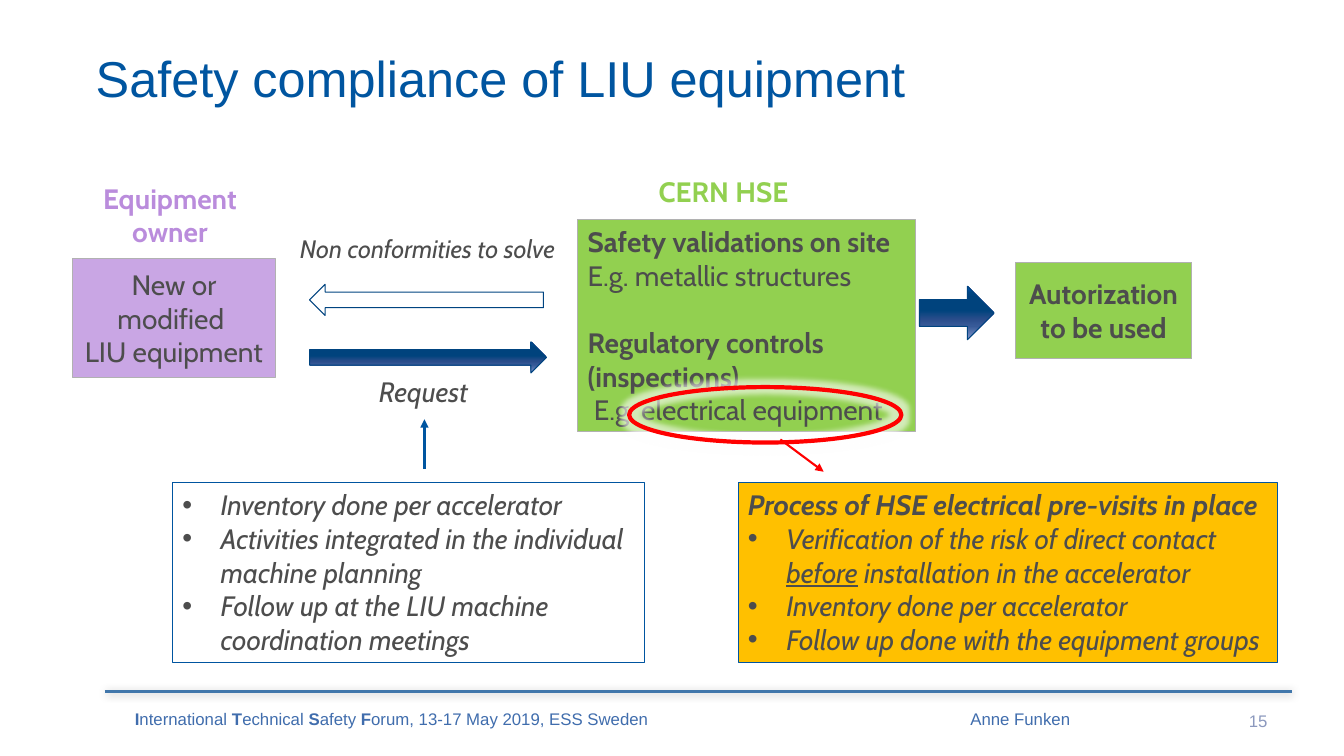
from dataclasses import dataclass

from lxml import etree
from pptx import Presentation, util as u
from pptx.dml.color import RGBColor
from pptx.enum import shapes, text
from pptx.oxml import ns

CELL = 0.1  # inches per grid cell
COLORS = {
    "title": "0055A0", "body": "4D4D4D", "footer": "406DAD", "number": "8C99BE",
    "rule": "4177AB", "green": "92D050", "purple": "C9A6E4", "owner": "BA8CDC",
    "amber": "FFC000", "red": "FF0000", "border": "B1B1B1", "arrow": "004480",
    "white": "FFFFFF", "black": "000000",
}
ARROW_STOPS = [(0, "8498CC"), (25, "375A98"), (38, "2A4D8B"), (55, "00437D"),
               (80, "00427C"), (88, "004683"), (100, "0055B9")]
ALIGN = {"l": text.PP_ALIGN.LEFT, "c": text.PP_ALIGN.CENTER, "r": text.PP_ALIGN.RIGHT}
SHAPE = shapes.MSO_SHAPE


@dataclass
class Para:
    """Text between bars gets the accent: bold or underline."""
    words: str
    bold: bool = False
    bullet: bool = False
    before: int = 0
    accent: str = "bold"


def rgb(name):
    return RGBColor.from_string(COLORS[name])


def cells(*values):
    return [u.Inches(value * CELL) for value in values]


def place(region, left, top, width, height):
    return cells(region[0] + left, region[1] + top, width, height)


def add_xml(parent, tag, **attributes):
    return etree.SubElement(parent, ns.qn(tag), {k: str(v) for k, v in attributes.items()})


def add_effect(item, tag, color, alpha, **attributes):
    props = item._element.spPr
    for old in props.findall(ns.qn("a:effectLst")):
        props.remove(old)
    effect = add_xml(add_xml(props, "a:effectLst"), tag, **attributes)
    tint = add_xml(effect, "a:srgbClr", val=COLORS[color])
    add_xml(tint, "a:alpha", val=alpha * 1000)


def write(shape, paras, size=20, color="body", font="Cabin", align="l",
          anchor=text.MSO_ANCHOR.TOP, italic=False, inset=0.1):
    frame = shape.text_frame
    frame.word_wrap = True
    frame.vertical_anchor = anchor
    frame.margin_left = frame.margin_right = u.Inches(inset)
    for index, item in enumerate(paras):
        para = frame.add_paragraph() if index else frame.paragraphs[0]
        para.alignment = ALIGN[align]
        if item.before:
            para.space_before = u.Pt(item.before)
        if item.bullet:
            props = para._p.get_or_add_pPr()
            props.set("marL", str(u.Inches(0.38)))
            props.set("indent", str(-u.Inches(0.38)))
            add_xml(props, "a:buFont", typeface="Arial")
            add_xml(props, "a:buChar", char="•")
        para.font.name, para.font.size = font, u.Pt(size)
        para.font.bold, para.font.italic = item.bold, italic
        para.font.color.rgb = rgb(color)
        for number, part in enumerate(item.words.split("|")):
            if part:
                span = para.add_run()
                span.text = part
                if number % 2:
                    setattr(span.font, item.accent, True)


def add_label(page, region, spot, words, bold=False, **style):
    box = page.shapes.add_textbox(*place(region, *spot))
    write(box, [Para(words, bold)], **style)


def add_shape(page, region, kind, spot, line, fill=None, weight=0.75):
    shape = page.shapes.add_shape(kind, *place(region, *spot))
    shape.shadow.inherit = False
    shape.line.color.rgb = rgb(line)
    shape.line.width = u.Pt(weight)
    if fill:
        shape.fill.solid()
        shape.fill.fore_color.rgb = rgb(fill)
    else:
        shape.fill.background()
    return shape


def add_solid_arrow(page, region, spot):
    arrow = add_shape(page, region, SHAPE.LEFT_ARROW, spot, "arrow")
    arrow.rotation = 180
    arrow.fill.gradient()
    arrow.fill.gradient_angle = 270
    stops = arrow._element.xpath(".//a:gsLst")[0]
    for old in list(stops):
        stops.remove(old)
    for position, color in ARROW_STOPS:
        add_xml(add_xml(stops, "a:gs", pos=position * 1000), "a:srgbClr", val=color)


def add_line(page, region, start, end, color, weight=1.5, head=True):
    x, y = region
    line = page.shapes.add_connector(
        shapes.MSO_CONNECTOR.STRAIGHT,
        *cells(x + start[0], y + start[1], x + end[0], y + end[1]))
    line.line.color.rgb = rgb(color)
    line.line.width = u.Pt(weight)
    if head:
        add_xml(line.line._get_or_add_ln(), "a:tailEnd", type="triangle")
    add_xml(line._element.spPr, "a:effectLst")
    return line


def draw_title(page, region):
    add_label(page, region, (0, 0, 102.7, 8.9), "Safety compliance of LIU equipment", size=36,
              color="title", font="Arial", anchor=text.MSO_ANCHOR.MIDDLE, inset=0.05)


def draw_flow(page, region):
    middle = text.MSO_ANCHOR.MIDDLE

    # Owner, inspection and approval boxes
    add_label(page, region, (0, 0.7, 19.9, 7.7), "Equipment owner", True,
              color="owner", align="c")
    add_label(page, region, (49.9, 0, 29.9, 4.4), "CERN HSE", True, color="green", align="c")
    stages = [
        ((0.3, 8.8, 20.1, 11.9), "purple", "c",
         [Para("New or modified "), Para("LIU equipment")]),
        ((50.4, 5, 33.5, 21), "green", "l",
         [Para("Safety validations on site", True), Para("E.g. metallic structures"),
          Para("Regulatory controls (inspections)", True, before=24),
          Para(" E.g. electrical equipment")]),
        ((93.8, 9.2, 17.5, 9.6), "green", "c", [Para("Autorization to be used", True)]),
    ]
    for spot, fill, align, paras in stages:
        stage = add_shape(page, region, SHAPE.RECTANGLE, spot, "border", fill)
        write(stage, paras, align=align, anchor=middle)

    # Exchanges between the boxes
    add_label(page, region, (21.6, 5.9, 27.8, 4), "Non conformities to solve",
              size=18, align="c", italic=True)
    add_shape(page, region, SHAPE.LEFT_ARROW, (23.8, 11.4, 23.2, 3.1), "arrow")
    add_solid_arrow(page, region, (23.8, 17.1, 23.5, 3.1))
    add_label(page, region, (29.7, 19.9, 12.3, 4.4), "Request", italic=True)
    add_solid_arrow(page, region, (84.3, 11.6, 7.4, 5.3))

    # Highlight and links to the notes
    ring = add_shape(page, region, SHAPE.OVAL, (55.5, 21.6, 27, 5.5), "red", weight=3)
    add_effect(ring, "a:glow", "white", 60, rad=u.Pt(8))
    add_line(page, region, (70.5, 26.8), (74.8, 30), "red")
    add_line(page, region, (35.2, 29.7), (35.2, 24.8), "title")


def draw_notes(page, region):
    notes = [
        ((0, 0, 46.8, 17.8), None,
         [Para("Inventory done per accelerator", bullet=True),
          Para("Activities integrated in the individual machine planning", bullet=True),
          Para("Follow up at the LIU machine coordination meetings", bullet=True)]),
        ((56.1, 0, 53.5, 17.8), "amber",
         [Para("Process of HSE electrical pre-visits in place", True),
          Para("Verification of the risk of direct contact |before| installation in the "
               "accelerator", bullet=True, accent="underline"),
          Para("Inventory done per accelerator", bullet=True),
          Para("Follow up done with the equipment groups", bullet=True)]),
    ]
    for spot, fill, paras in notes:
        note = add_shape(page, region, SHAPE.RECTANGLE, spot, "title", fill)
        write(note, paras, italic=True)


def draw_footer(page, region):
    rule = add_line(page, region, (1.4, 1), (119.1, 1), "rule", 2.25, head=False)
    add_effect(rule, "a:outerShdw", "black", 20,
               blurRad=u.Pt(6), dist=u.Pt(1), dir=45 * 60000)
    entries = [
        ((0, 0, 59.7, 7.4), "c", "footer",
         "|I|nternational |T|echnical |S|afety |F|orum, 13-17 May 2019, ESS Sweden"),
        ((75.9, 0, 32.6, 7.4), "c", "footer", "Anne Funken"),
        ((110.4, 1.9, 7.3, 4), "r", "number", "15"),
    ]
    for spot, align, color, words in entries:
        add_label(page, region, spot, words, size=12, font="Arial", color=color,
                  align=align, anchor=text.MSO_ANCHOR.MIDDLE)


def main():
    deck = Presentation()
    deck.slide_width, deck.slide_height = u.Inches(13.33), u.Inches(7.5)
    page = deck.slides.add_slide(deck.slide_layouts[6])
    draw_title(page, (9, 3.2))
    draw_flow(page, (6.9, 16.8))
    draw_notes(page, (17.1, 47.9))
    draw_footer(page, (9, 67.6))
    deck.save("out.pptx")


if __name__ == "__main__":
    main()
